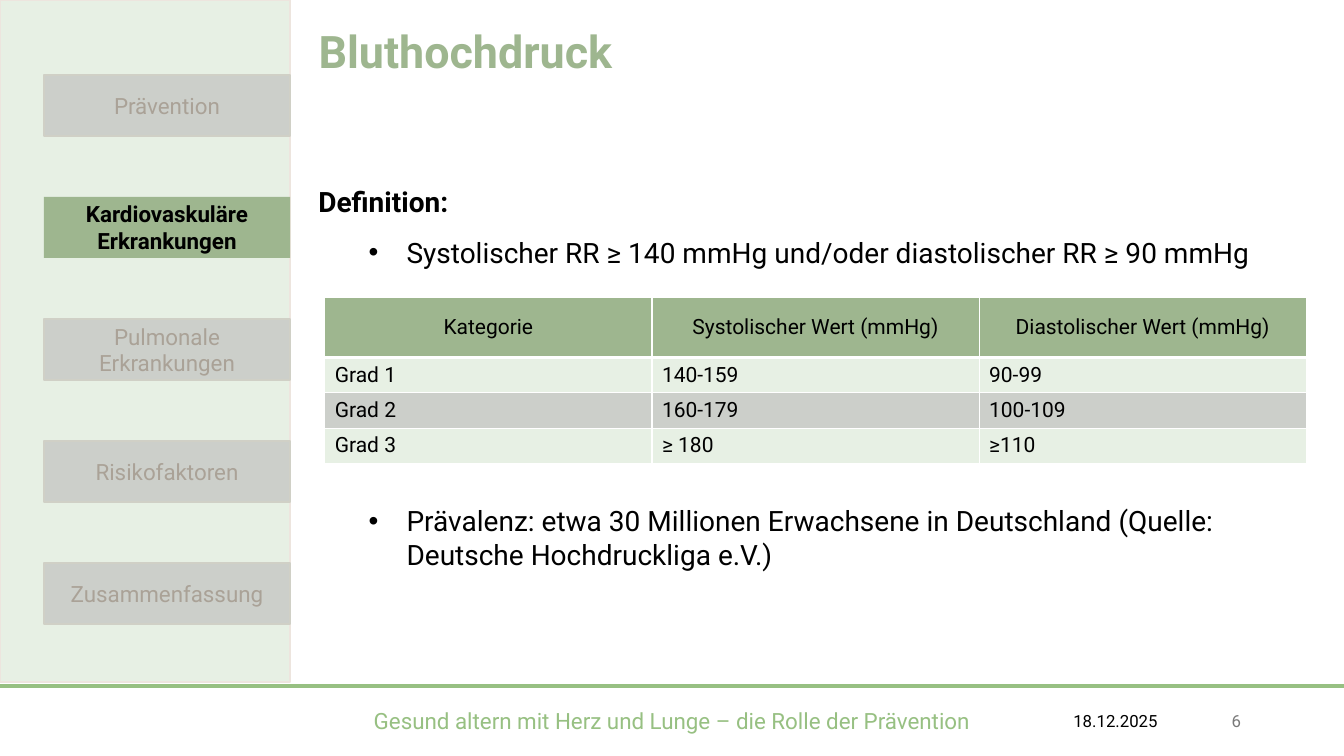
from lxml.etree import SubElement
from pptx import Presentation
from pptx.dml.color import RGBColor
from pptx.enum.shapes import MSO_CONNECTOR as Connector, MSO_SHAPE as Shape
from pptx.enum.text import MSO_ANCHOR as Anchor, PP_ALIGN as Align
from pptx.oxml.ns import qn
from pptx.util import Pt

SAGE = RGBColor(0x9E, 0xB6, 0x8F)
LEAF = RGBColor(0x97, 0xC0, 0x82)
MINT = RGBColor(0xE7, 0xF0, 0xE4)
SILVER = RGBColor(0xCC, 0xCF, 0xCA)
SILVER_EDGE = RGBColor(0xD0, 0xD0, 0xC6)
SAND = RGBColor(0xED, 0xE5, 0xDE)
TAUPE = RGBColor(0xAA, 0xA2, 0x97)
GREY = RGBColor(0x79, 0x79, 0x79)
BLACK = RGBColor(0, 0, 0)
WHITE = RGBColor(0xFF, 0xFF, 0xFF)

SLIDE_WIDTH, SLIDE_HEIGHT = 960, 540
CONTENT_LEFT, CONTENT_WIDTH = 220.3, 722.9
FOOTER_TOP, FOOTER_HEIGHT = 500.4, 28.8

CHAPTERS = ["Prävention", "Kardiovaskuläre Erkrankungen", "Pulmonale Erkrankungen",
            "Risikofaktoren", "Zusammenfassung"]
ACTIVE_CHAPTER = 1
CHAPTER_TOP, CHAPTER_STEP = 53.3, 87.3

GRADES = [
    ["Kategorie", "Systolischer Wert (mmHg)", "Diastolischer Wert (mmHg)"],
    ["Grad 1", "140-159", "90-99"],
    ["Grad 2", "160-179", "100-109"],
    ["Grad 3", "≥ 180", "≥110"],
]


class SlideBuilder:
    def __init__(self, presentation, font_name):
        self.slide = presentation.slides.add_slide(presentation.slide_layouts[5])
        self.shapes = self.slide.shapes
        self.font_name = font_name

    def add_text(self, paragraph, text, size, color, bold=False, align=Align.LEFT):
        paragraph.alignment = align
        run = paragraph.add_run()
        run.text = text
        for name, value in {"name": self.font_name, "size": Pt(size), "bold": bold}.items():
            setattr(run.font, name, value)
        run.font.color.rgb = color

    def title(self, text, left, top, width, height):
        title = self.shapes.title
        box = {"left": left, "top": top, "width": width, "height": height}
        for name, value in box.items():
            setattr(title, name, Pt(value))
        title.text_frame.vertical_anchor = Anchor.TOP
        self.add_text(title.text_frame.paragraphs[0], text, 32, SAGE, bold=True)

    def rectangle(self, left, top, width, height, fill, edge=None):
        shape = self.shapes.add_shape(Shape.RECTANGLE, Pt(left), Pt(top), Pt(width), Pt(height))
        shape.shadow.inherit = False
        shape.fill.solid()
        shape.fill.fore_color.rgb = fill
        if edge is None:
            shape.line.fill.background()
        else:
            shape.line.color.rgb = edge
            shape.line.width = Pt(1.5)
        return shape

    def chapter(self, text, top, active):
        fill, edge, color = (SAGE, None, BLACK) if active else (SILVER, SILVER_EDGE, TAUPE)
        frame = self.rectangle(31.4, top, 175.8, 43.6, fill, edge).text_frame
        frame.word_wrap = True
        frame.vertical_anchor = Anchor.MIDDLE
        self.add_text(frame.paragraphs[0], text, 16, color, active, Align.CENTER)

    def text_box(self, left, top, width, height, anchor=Anchor.TOP):
        frame = self.shapes.add_textbox(Pt(left), Pt(top), Pt(width), Pt(height)).text_frame
        frame.word_wrap = True
        frame.vertical_anchor = anchor
        return frame

    def footer(self, text, left, width, size, color, align):
        frame = self.text_box(left, FOOTER_TOP, width, FOOTER_HEIGHT, Anchor.MIDDLE)
        self.add_text(frame.paragraphs[0], text, size, color, align=align)

    def bullet(self, paragraph, text):
        properties = paragraph._p.get_or_add_pPr()
        properties.set("marL", str(Pt(63)))
        properties.set("indent", str(Pt(-27)))
        SubElement(properties, qn("a:buFont"), typeface="Arial")
        SubElement(properties, qn("a:buChar"), char="•")
        self.add_text(paragraph, text, 20, BLACK)

    def rule(self, top, color, width):
        line = self.shapes.add_connector(Connector.STRAIGHT, 0, Pt(top), Pt(SLIDE_WIDTH), Pt(top))
        line.line.color.rgb = color
        line.line.width = Pt(width)
        SubElement(line._element.spPr, qn("a:effectLst"))

    def border(self, cell, side, width):
        line = SubElement(cell._tc.get_or_add_tcPr(), qn(f"a:ln{side}"), w=str(Pt(width)))
        fill = SubElement(line, qn("a:solidFill"))
        SubElement(fill, qn("a:srgbClr"), val=str(WHITE))

    def table(self, rows, left, top, column_width, header_height, row_height):
        columns = len(rows[0])
        height = header_height + row_height * (len(rows) - 1)
        table = self.shapes.add_table(len(rows), columns, Pt(left), Pt(top),
                                      Pt(column_width * columns), Pt(height)).table
        for column in table.columns:
            column.width = Pt(column_width)
        for row_number, texts in enumerate(rows):
            header = row_number == 0
            table.rows[row_number].height = Pt(header_height if header else row_height)
            fill = SAGE if header else (SILVER, MINT)[row_number % 2]
            for column_number, text in enumerate(texts):
                cell = table.cell(row_number, column_number)
                for side in "LRTB":
                    self.border(cell, side, 3 if header and side == "B" else 1)
                cell.fill.solid()
                cell.fill.fore_color.rgb = fill
                cell.vertical_anchor = Anchor.MIDDLE if header else Anchor.TOP
                self.add_text(cell.text_frame.paragraphs[0], text, 15, BLACK,
                              align=Align.CENTER if header else Align.LEFT)


def main():
    presentation = Presentation()
    presentation.slide_width = Pt(SLIDE_WIDTH)
    presentation.slide_height = Pt(SLIDE_HEIGHT)
    builder = SlideBuilder(presentation, "Roboto")

    builder.title("Bluthochdruck", CONTENT_LEFT, 13, CONTENT_WIDTH, 46)
    builder.rule(489.9, LEAF, 3)
    builder.rectangle(0, 0, 207.4, 487.5, MINT, SAND)
    for number, chapter in enumerate(CHAPTERS):
        builder.chapter(chapter, CHAPTER_TOP + number * CHAPTER_STEP, number == ACTIVE_CHAPTER)

    definition = builder.text_box(CONTENT_LEFT, 128.5, CONTENT_WIDTH, 70)
    builder.add_text(definition.paragraphs[0], "Definition:", 20, BLACK, bold=True)
    criterion = definition.add_paragraph()
    criterion.space_before = Pt(12)
    builder.bullet(criterion, "Systolischer RR ≥ 140 mmHg und/oder diastolischer RR ≥ 90 mmHg")

    builder.table(GRADES, 232, 212.2, 233.7, 43.2, 25.2)

    prevalence = builder.text_box(CONTENT_LEFT, 356.4, CONTENT_WIDTH, 55)
    builder.bullet(prevalence.paragraphs[0],
                   "Prävalenz: etwa 30 Millionen Erwachsene in Deutschland "
                   "(Quelle: Deutsche Hochdruckliga e.V.)")

    builder.footer("Gesund altern mit Herz und Lunge – die Rolle der Prävention",
                   240.5, 478.8, 16, LEAF, Align.CENTER)
    builder.footer("18.12.2025", 759.6, 84.2, 12, BLACK, Align.LEFT)
    builder.footer("6", 851.8, 41.8, 12, GREY, Align.RIGHT)

    presentation.save("out.pptx")


if __name__ == "__main__":
    main()
